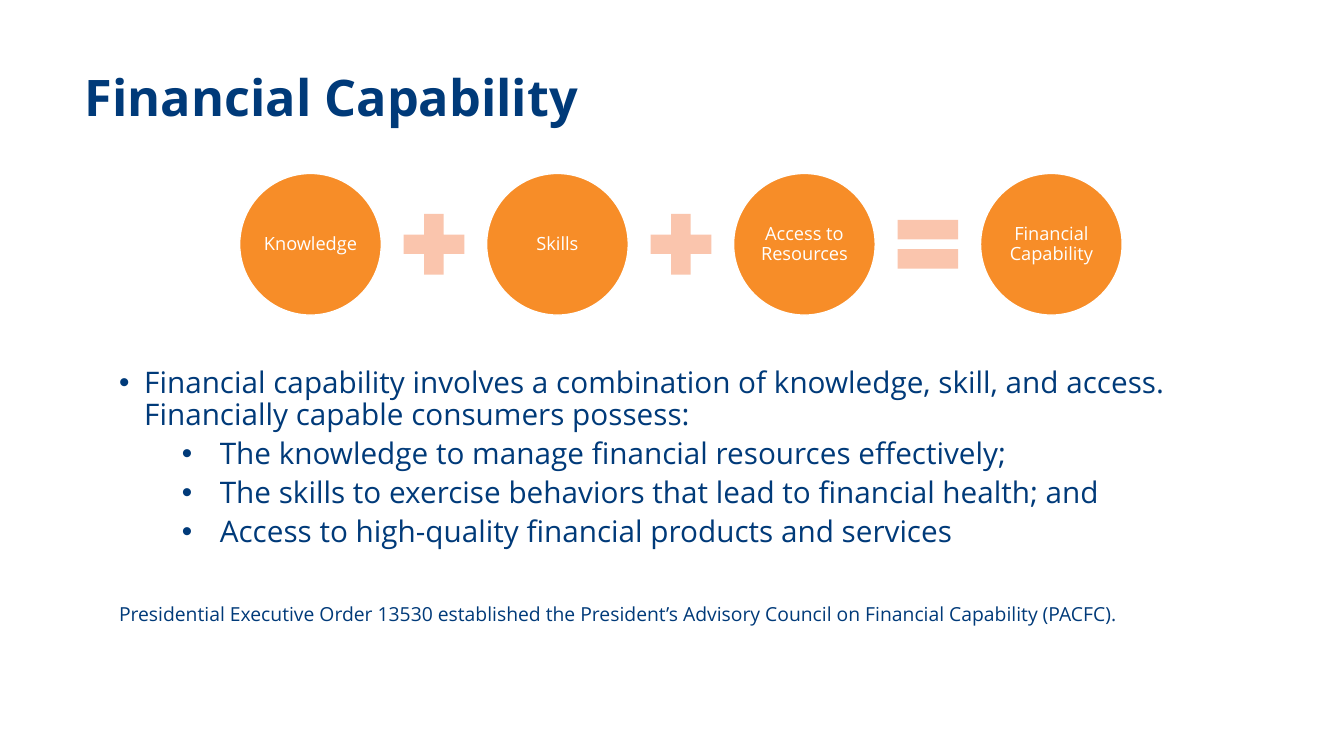
from lxml import etree
from pptx import Presentation
from pptx.dml.color import RGBColor
from pptx.enum import shapes, text
from pptx.oxml import ns
from pptx.util import Pt

TITLE = "Financial Capability"
TERMS = ["Knowledge", "Skills", "Access to Resources", "Financial Capability"]
SIGNS = [shapes.MSO_SHAPE.MATH_PLUS, shapes.MSO_SHAPE.MATH_PLUS, shapes.MSO_SHAPE.MATH_EQUAL]

# text, size, left margin, hanging indent, space before
BODY = [
    ("Financial capability involves a combination of knowledge, skill, and access. "
     "Financially capable consumers possess:", 21.2, 18, 18, 0),
    ("The knowledge to manage financial resources effectively;", 21.2, 72, 27, 5),
    ("The skills to exercise behaviors that lead to financial health; and", 21.2, 72, 27, 5),
    ("Access to high-quality financial products and services", 21.2, 72, 27, 5),
    ("Presidential Executive Order 13530 established the President’s Advisory Council "
     "on Financial Capability (PACFC).", 13.8, 0, 0, 40),
]

FONT = "Open Sans"
NAVY, ORANGE, PEACH, WHITE = "003A79", "F78D28", "FAC5AD", "FFFFFF"
ROW_LEFT, ROW_TOP = 171.2, 123.9
CIRCLE, SIGN, PITCH = 101.2, 59, 176.4


def color(hex_string):
    return RGBColor.from_string(hex_string)


def format_paragraph(paragraph, size, hex_string, bold=False):
    paragraph.line_spacing = 0.9
    for run in paragraph.runs:
        run.font.name = FONT
        run.font.size = Pt(size)
        run.font.bold = bold
        run.font.color.rgb = color(hex_string)


def set_bullet(paragraph, margin, hanging):
    properties = paragraph._p.get_or_add_pPr()
    properties.set("marL", str(Pt(margin)))
    properties.set("indent", str(-Pt(hanging)))
    if hanging:
        etree.SubElement(properties, ns.qn("a:buFont")).set("typeface", "Arial")
        etree.SubElement(properties, ns.qn("a:buChar")).set("char", "•")
    else:
        etree.SubElement(properties, ns.qn("a:buNone"))


def place(shape, left, top, width, height):
    shape.left, shape.top = Pt(left), Pt(top)
    shape.width, shape.height = Pt(width), Pt(height)
    frame = shape.text_frame
    frame.auto_size = text.MSO_AUTO_SIZE.NONE
    frame.vertical_anchor = text.MSO_ANCHOR.TOP
    return frame


def add_mark(slide, kind, left, top, size, fill):
    shape = slide.shapes.add_shape(kind, Pt(left), Pt(top), Pt(size), Pt(size))
    shape.shadow.inherit = False
    shape.fill.solid()
    shape.fill.fore_color.rgb = color(fill)
    shape.line.fill.background()
    return shape


def add_circle(slide, term, left):
    circle = add_mark(slide, shapes.MSO_SHAPE.OVAL, left, ROW_TOP, CIRCLE, ORANGE)
    circle.line.color.rgb = color(WHITE)
    circle.line.width = Pt(1)
    frame = circle.text_frame
    frame.margin_left = frame.margin_right = frame.margin_top = frame.margin_bottom = Pt(1.3)
    frame.word_wrap = True
    frame.vertical_anchor = text.MSO_ANCHOR.MIDDLE
    frame.text = term
    frame.paragraphs[0].alignment = text.PP_ALIGN.CENTER
    format_paragraph(frame.paragraphs[0], 13, WHITE)


def main():
    presentation = Presentation()
    presentation.slide_width, presentation.slide_height = Pt(960), Pt(540)
    slide = presentation.slides.add_slide(presentation.slide_layouts[1])

    # Title
    frame = place(slide.shapes.title, 53.3, 48.2, 676.8, 70)
    frame.text = TITLE
    frame.paragraphs[0].alignment = text.PP_ALIGN.LEFT
    format_paragraph(frame.paragraphs[0], 36, NAVY, bold=True)

    # Equation: circles at an even pitch, signs centred in the gaps
    for index, term in enumerate(TERMS):
        left = ROW_LEFT + index * PITCH
        add_circle(slide, term, left)
        if index < len(SIGNS):
            add_mark(slide, SIGNS[index], left + (CIRCLE + PITCH - SIGN) / 2,
                     ROW_TOP + (CIRCLE - SIGN) / 2, SIGN, PEACH)

    # Explanation and source line
    frame = place(slide.placeholders[1], 77.8, 259.2, 867.6, 219.6)
    frame.text = "\n".join(entry[0] for entry in BODY)
    for paragraph, (_, size, margin, hanging, before) in zip(frame.paragraphs, BODY):
        paragraph.level = 1 if margin > 18 else 0
        set_bullet(paragraph, margin, hanging)
        paragraph.space_before = Pt(before)
        format_paragraph(paragraph, size, NAVY)

    presentation.save("out.pptx")


if __name__ == "__main__":
    main()
